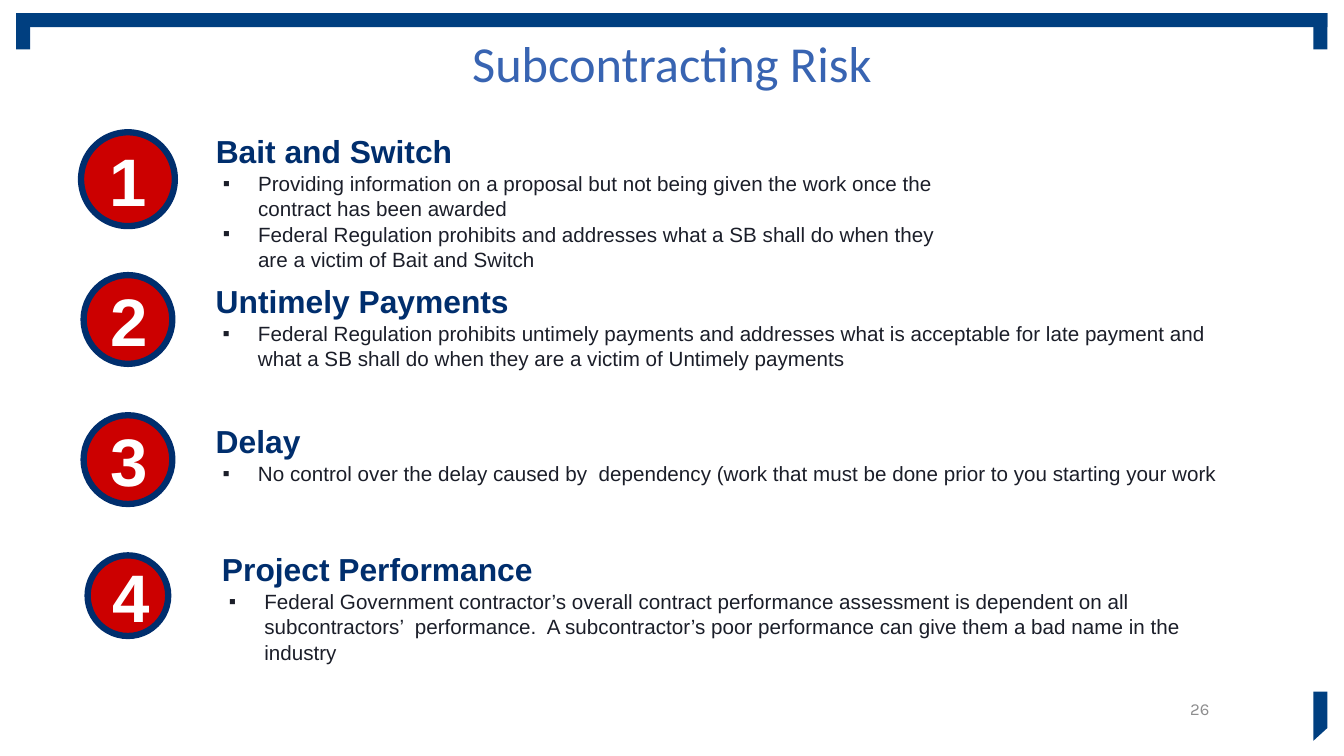
from lxml.etree import SubElement
from pptx import Presentation
from pptx.dml.color import RGBColor
from pptx.enum.shapes import MSO_SHAPE
from pptx.enum.text import MSO_ANCHOR, MSO_AUTO_SIZE, PP_ALIGN
from pptx.oxml.ns import qn
from pptx.util import Pt

TITLE = "Subcontracting Risk"
PAGE_NUMBER = "26"
RISKS = [
    {"heading": "Bait and Switch",
     "bullets": ["Providing information on a proposal but not being given the work once the contract has been awarded",
                 "Federal Regulation prohibits and addresses what a SB shall do when they are a victim of Bait and Switch"],
     "badge": (128, 67), "box": (144.5, 89.3, 539.3, 121.7)},
    {"heading": "Untimely Payments",
     "bullets": ["Federal Regulation prohibits untimely payments and addresses what is acceptable for late payment "
                 "and what a SB shall do when they are a victim of Untimely payments"],
     "badge": (228.2, 63.4), "box": (144.5, 196.6, 731.5, 67.7)},
    {"heading": "Delay",
     "bullets": ["No control over the delay caused by  dependency (work that must be done prior to you starting your work"],
     "badge": (328.3, 63.4), "box": (144.5, 296.6, 748.8, 78.5)},
    {"heading": "Project Performance",
     "bullets": ["Federal Government contractor’s overall contract performance assessment is dependent on all "
                 "subcontractors’  performance.  A subcontractor’s poor performance can give them a bad name in the industry"],
     "badge": (425.5, 57.6), "box": (149, 388.1, 731.5, 88.6)},
]
THEME = {
    "frame": "003F80", "badge": "CC0000", "navy": "002E6D", "body": "1B1E29",
    "title_font": {"name": "Calibri", "size": 36, "color": "3864B2", "bold": False},
    "number_font": {"name": "Karla", "size": 12, "color": "8D8D8E", "bold": False},
    "badge_font": {"name": "Arial", "size": 48, "color": "FFFFFF", "bold": True},
    "heading_font": {"name": "Arial", "size": 22.7, "color": "002E6D", "bold": True},
    "body_font": {"name": "Arial", "size": 14.7, "color": "1B1E29", "bold": False},
}
SLIDE_WIDTH, SLIDE_HEIGHT = 960, 540
FRAME_LEFT, FRAME_RIGHT, FRAME_TOP, FRAME_THICKNESS = 11.5, 948.2, 9.4, 10.1
BADGE_CENTER = 91.4
INSETS = (9.6, 4.8, 9.6, 4.8)


def points(values):
    return [Pt(value) for value in values]


def set_attributes(target, values):
    for name, value in values.items():
        setattr(target, name, value)


def prepare_frame(shape, insets, anchor):
    left, top, right, bottom = points(insets)
    set_attributes(shape.text_frame, {
        "margin_left": left, "margin_top": top, "margin_right": right, "margin_bottom": bottom,
        "vertical_anchor": anchor, "word_wrap": True, "auto_size": MSO_AUTO_SIZE.NONE})
    return shape.text_frame


def write(paragraph, text, style, alignment=PP_ALIGN.LEFT):
    paragraph.alignment = alignment
    run = paragraph.add_run()
    run.text = text
    set_attributes(run.font, {"name": style["name"], "size": Pt(style["size"]), "bold": style["bold"]})
    run.font.color.rgb = RGBColor.from_string(style["color"])


def paint(shape, fill, line=None):
    shape.shadow.inherit = False
    shape.fill.solid()
    shape.fill.fore_color.rgb = RGBColor.from_string(fill)
    if line:
        shape.line.color.rgb = RGBColor.from_string(line)
        shape.line.width = Pt(4.5)
    else:
        shape.line.fill.background()


def add_bullet(paragraph):
    properties = paragraph._p.get_or_add_pPr()
    properties.set("marL", str(Pt(30.2)))
    properties.set("indent", str(-Pt(25.2)))
    color = SubElement(properties, qn("a:buClr"))
    SubElement(color, qn("a:srgbClr"), val=THEME["body"])
    SubElement(properties, qn("a:buFont"), typeface="Arial")
    SubElement(properties, qn("a:buChar"), char="▪")


def add_page_frame(slide):
    right_edge = FRAME_RIGHT - FRAME_THICKNESS
    bars = [(FRAME_LEFT, FRAME_RIGHT - FRAME_LEFT, FRAME_THICKNESS),
            (FRAME_LEFT, FRAME_THICKNESS, 25.9),
            (right_edge, FRAME_THICKNESS, 25.9)]
    for left, width, height in bars:
        bar = slide.shapes.add_shape(MSO_SHAPE.RECTANGLE, *points((left, FRAME_TOP, width, height)))
        paint(bar, THEME["frame"])
    outline = [(FRAME_RIGHT, 494), (FRAME_RIGHT, 520), (right_edge, 529.2)]
    builder = slide.shapes.build_freeform(Pt(right_edge), Pt(494))
    builder.add_line_segments([points(corner) for corner in outline], close=True)
    paint(builder.convert_to_shape(), THEME["frame"])


def add_title_and_number(slide):
    title = slide.shapes.title
    left, top, width, height = points((72, 10.8, 816, 67.7))
    set_attributes(title, {"left": left, "top": top, "width": width, "height": height})
    frame = prepare_frame(title, (0, 0, 0, 0), MSO_ANCHOR.MIDDLE)
    write(frame.paragraphs[0], TITLE, THEME["title_font"], PP_ALIGN.CENTER)
    number = slide.shapes.add_textbox(*points((672, 489.6, 192, 33.8)))
    frame = prepare_frame(number, (0, 0, 0, 0), MSO_ANCHOR.MIDDLE)
    write(frame.paragraphs[0], PAGE_NUMBER, THEME["number_font"], PP_ALIGN.RIGHT)


def add_risk(slide, number, risk):
    center, diameter = risk["badge"]
    radius = diameter / 2
    bounds = points((BADGE_CENTER - radius, center - radius, diameter, diameter))
    badge = slide.shapes.add_shape(MSO_SHAPE.OVAL, *bounds)
    paint(badge, THEME["badge"], THEME["navy"])
    frame = prepare_frame(badge, INSETS, MSO_ANCHOR.MIDDLE)
    write(frame.paragraphs[0], str(number), THEME["badge_font"], PP_ALIGN.CENTER)
    box = slide.shapes.add_textbox(*points(risk["box"]))
    frame = prepare_frame(box, INSETS, MSO_ANCHOR.TOP)
    write(frame.paragraphs[0], risk["heading"], THEME["heading_font"])
    for text in risk["bullets"]:
        paragraph = frame.add_paragraph()
        add_bullet(paragraph)
        paragraph.line_spacing = 1.03
        write(paragraph, text, THEME["body_font"])


def main():
    """Build the subcontracting risk slide and save it."""
    presentation = Presentation()
    set_attributes(presentation, {"slide_width": Pt(SLIDE_WIDTH), "slide_height": Pt(SLIDE_HEIGHT)})
    slide = presentation.slides.add_slide(presentation.slide_layouts[5])
    add_page_frame(slide)
    add_title_and_number(slide)
    for number, risk in enumerate(RISKS, start=1):
        add_risk(slide, number, risk)
    presentation.save("out.pptx")


if __name__ == "__main__":
    main()
